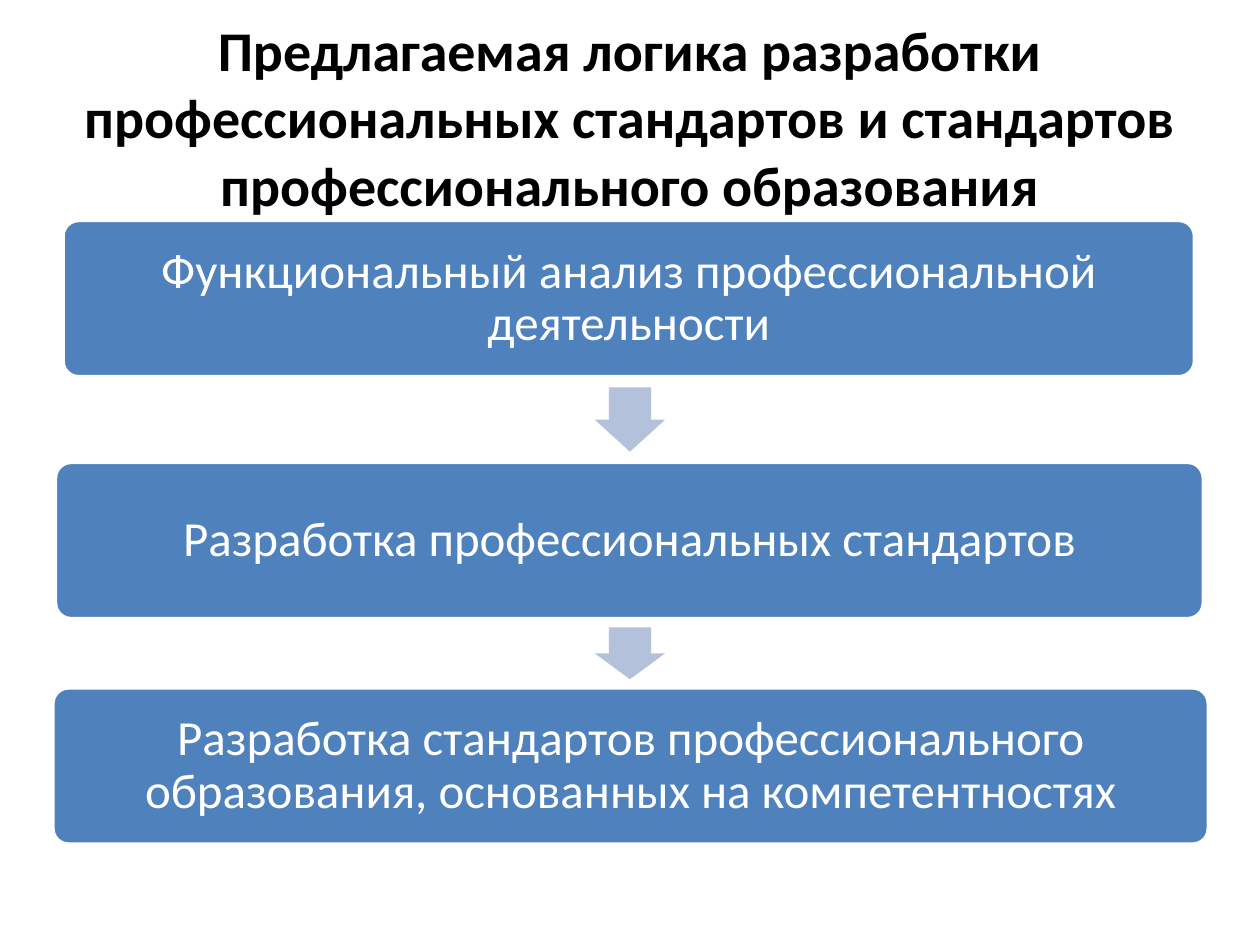
from pptx import Presentation
from pptx.dml.color import RGBColor
from pptx.enum.shapes import MSO_SHAPE
from pptx.enum.text import MSO_ANCHOR, PP_ALIGN
from pptx.util import Inches, Pt

TITLE = ("Предлагаемая логика разработки профессиональных стандартов "
         "и стандартов профессионального образования")
# Steps: text, left, top, width
STEPS = [
    ("Функциональный анализ профессиональной деятельности", 0.5, 1.75, 8.98),
    ("Разработка профессиональных стандартов", 0.44, 3.67, 9.11),
    ("Разработка стандартов профессионального образования, "
     "основанных на компетентностях", 0.42, 5.46, 9.17),
]
STEP_H = 1.24
ARROW_W = 0.56
ARROW_SHARE = 0.75  # part of the gap between steps that an arrow fills
TITLE_FONT = {"name": "Calibri", "size": Pt(32), "bold": True}
STEP_FONT = {"name": "Calibri", "size": Pt(28), "bold": False}


def rgb(value):
    return RGBColor.from_string(value)


def write(s, text, font, color, inset_x, inset_y, spacing):
    tf = s.text_frame
    tf.word_wrap = True
    tf.vertical_anchor = MSO_ANCHOR.MIDDLE
    tf.margin_left = tf.margin_right = Inches(inset_x)
    tf.margin_top = tf.margin_bottom = Inches(inset_y)
    p = tf.paragraphs[0]
    p.alignment = PP_ALIGN.CENTER
    p.line_spacing = spacing
    r = p.add_run()
    r.text = text
    for key, value in font.items():
        setattr(r.font, key, value)
    r.font.color.rgb = rgb(color)


def add_shape(slide, kind, box, fill, adjustments):
    s = slide.shapes.add_shape(kind, *(Inches(v) for v in box))
    s.shadow.inherit = False
    s.fill.solid()
    s.fill.fore_color.rgb = rgb(fill)
    s.line.fill.background()
    for i, value in enumerate(adjustments):
        s.adjustments[i] = value
    return s


def main():
    prs = Presentation()
    prs.slide_width, prs.slide_height = Inches(10), Inches(7.5)
    slide = prs.slides.add_slide(prs.slide_layouts[6])

    # Title
    title = slide.shapes.add_textbox(Inches(0.5), Inches(0.3), Inches(9), Inches(1.25))
    write(title, TITLE, TITLE_FONT, "000000", 0.1, 0.05, 1.0)

    # Steps
    for text, left, top, width in STEPS:
        s = add_shape(slide, MSO_SHAPE.ROUNDED_RECTANGLE,
                      (left, top, width, STEP_H), "4F81BD", [0.1])
        s.line.color.rgb = rgb("FFFFFF")
        s.line.width = Pt(2)
        write(s, text, STEP_FONT, "FFFFFF", 0.12, 0.12, 0.9)

    # Arrows centred in the gaps between steps
    for (_, _, top, _), (_, _, next_top, _) in zip(STEPS, STEPS[1:]):
        gap = next_top - top - STEP_H
        height = gap * ARROW_SHARE
        arrow_top = top + STEP_H + (gap - height) / 2
        add_shape(slide, MSO_SHAPE.DOWN_ARROW,
                  (5 - ARROW_W / 2, arrow_top, ARROW_W, height), "B3C1DB", [0.6, 0.5])

    prs.save("out.pptx")


if __name__ == "__main__":
    main()
